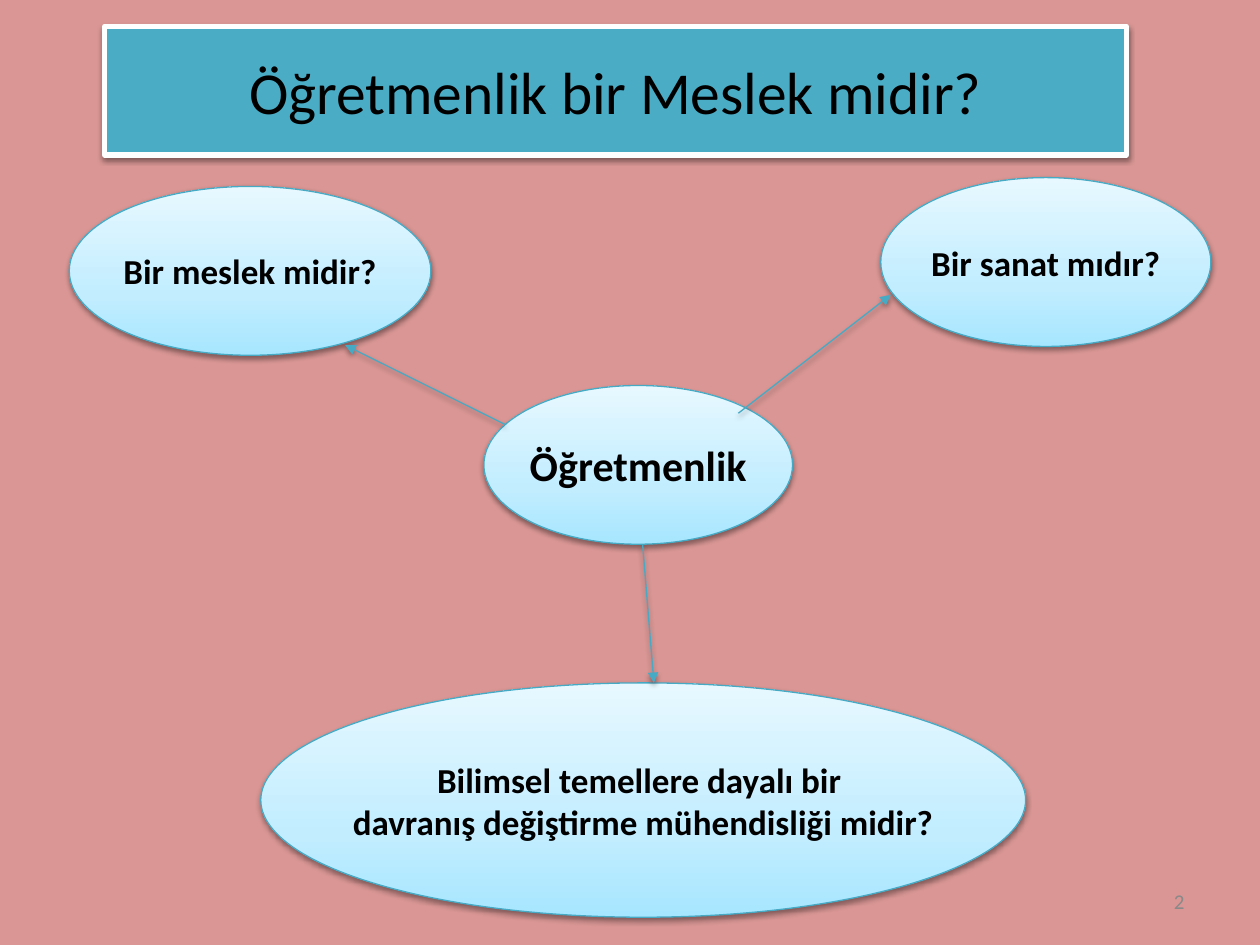
from copy import deepcopy
from lxml.etree import SubElement as Sub
from pptx import Presentation
from pptx.dml.color import RGBColor
from pptx.enum.shapes import MSO_CONNECTOR as Conn, MSO_SHAPE as Geo
from pptx.enum.text import MSO_ANCHOR as Anchor, PP_ALIGN as Align
from pptx.oxml.ns import qn
from pptx.util import Inches, Pt


def tint(code):
    return RGBColor.from_string(code)


class Deck:
    font = "Calibri"
    ink = "000000"
    edge = "46AAC5"
    stops = [(0, "A7E6FF"), (0.35, "C1EDFF"), (1, "E7F8FF")]

    def __init__(self, back):
        self.prs = Presentation()
        self.prs.slide_width, self.prs.slide_height = Inches(10), Inches(7.5)
        self.slide = self.prs.slides.add_slide(self.prs.slide_layouts[6])
        fill = self.slide.background.fill
        fill.solid()
        fill.fore_color.rgb = tint(back)

    def place(self, *shares):
        sides = (self.prs.slide_width, self.prs.slide_height) * 2
        return [round(share * side / 100) for share, side in zip(shares, sides)]

    def stroke(self, line, color, width):
        line.color.rgb = tint(color)
        line.width = Pt(width)

    def shade(self, shape):
        props = shape.element.spPr
        box = props.find(qn("a:effectLst"))
        if box is None:
            box = Sub(props, qn("a:effectLst"))
        cast = Sub(box, qn("a:outerShdw"), blurRad="40000", dist="20000",
                   dir="5400000", rotWithShape="0")
        color = Sub(cast, qn("a:srgbClr"), val="000000")
        Sub(color, qn("a:alpha"), val="38000")

    def label(self, shape, lines, size, color=ink, bold=False, wrap=True, align=Align.CENTER):
        frame = shape.text_frame
        frame.word_wrap = wrap
        frame.vertical_anchor = Anchor.MIDDLE
        for at, text in enumerate(lines):
            para = frame.add_paragraph() if at else frame.paragraphs[0]
            para.alignment = align
            run = para.add_run()
            run.text = text
            run.font.name = self.font
            run.font.size = Pt(size)
            run.font.bold = bold
            run.font.color.rgb = tint(color)

    def shape(self, kind, area):
        item = self.slide.shapes.add_shape(kind, *self.place(*area))
        item.shadow.inherit = False
        return item

    def title(self, area, text):
        item = self.shape(Geo.RECTANGLE, area)
        item.fill.solid()
        item.fill.fore_color.rgb = tint("4BACC6")
        self.stroke(item.line, "FFFFFF", 3)
        self.shade(item)
        self.label(item, [text], 34)

    def bubble(self, area, lines, size=20):
        item = self.shape(Geo.OVAL, area)
        item.fill.gradient()
        item.fill.gradient_angle = 90
        ramp = item.element.spPr.find(qn("a:gradFill")).find(qn("a:gsLst"))
        ramp.append(deepcopy(ramp[0]))
        for stop, (spot, color) in zip(item.fill.gradient_stops, self.stops):
            stop.position = spot
            stop.color.rgb = tint(color)
        self.stroke(item.line, self.edge, 0.75)
        self.shade(item)
        self.label(item, lines, size, bold=True, wrap=False)

    def arrow(self, start, end):
        item = self.slide.shapes.add_connector(
            Conn.STRAIGHT, *self.place(*start), *self.place(*end))
        self.stroke(item.line, self.edge, 0.75)
        Sub(item.element.spPr.find(qn("a:ln")), qn("a:tailEnd"), type="triangle")
        self.shade(item)

    def number(self, area, text):
        item = self.slide.shapes.add_textbox(*self.place(*area))
        self.label(item, [text], 12, "898989", align=Align.RIGHT)


def main():
    deck = Deck("D99694")
    deck.title((8.3, 2.8, 81.1, 13.6), "Öğretmenlik bir Meslek midir?")
    deck.bubble((5.5, 19.73, 28.7, 17.87), ["Bir meslek midir?"])
    deck.bubble((38.4, 40.8, 24.5, 16.8), ["Öğretmenlik"], 24)
    deck.bubble((69.9, 18.8, 26.2, 17.87), ["Bir sanat mıdır?"])
    deck.bubble((20.7, 72.27, 60.7, 24.8),
                ["Bilimsel temellere dayalı bir ", "davranış değiştirme mühendisliği midir?"])
    deck.arrow((58.6, 43.73), (70.7, 31.2))
    deck.arrow((40.1, 44.93), (27.4, 36.53))
    deck.arrow((51, 57.6), (51.9, 72.27))
    deck.number((71.7, 92.7, 23.3, 5.3), "2")
    deck.prs.save("out.pptx")


if __name__ == "__main__":
    main()
